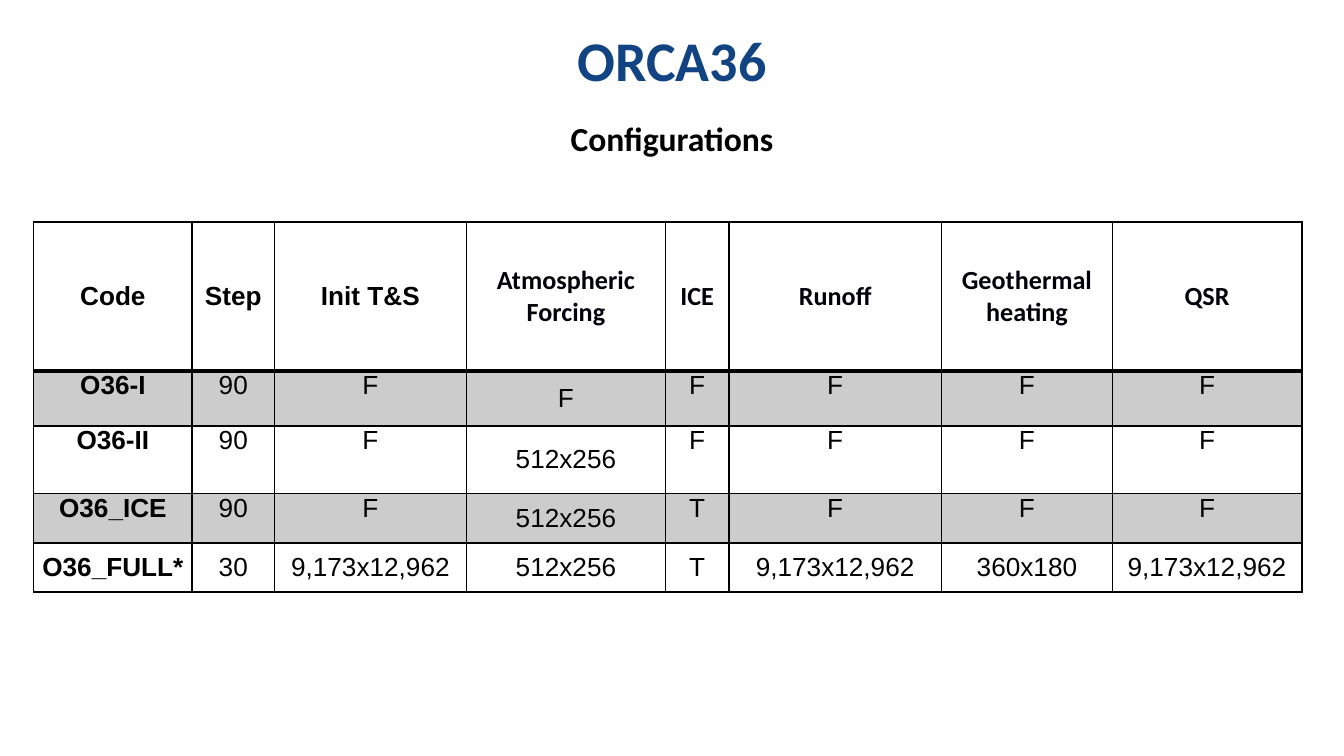
from lxml.etree import SubElement
from pptx import Presentation
from pptx.dml.color import RGBColor as RGB
from pptx.enum.text import MSO_ANCHOR as Anchor, PP_ALIGN as Align
from pptx.oxml import parse_xml
from pptx.oxml.ns import nsdecls, qn
from pptx.util import Pt

COLORS = {"title": "124484", "text": "000000", "heading": "00000A", "line": "000000", "band": "000000"}
BAND_OPACITY = 20
COLUMN_WIDTHS = [85, 44, 103, 106.5, 34, 114, 91.5, 101.5]
ROW_HEIGHTS = [80, 29.5, 36, 26.5, 26.5]
FORCING_COLUMN = 3
CONFIGURATIONS = [
    ["Code", "Step", "Init T&S", "Atmospheric Forcing", "ICE", "Runoff", "Geothermal heating", "QSR"],
    ["O36-I", "90", "F", "F", "F", "F", "F", "F"],
    ["O36-II", "90", "F", "512x256", "F", "F", "F", "F"],
    ["O36_ICE", "90", "F", "512x256", "T", "F", "F", "F"],
    ["O36_FULL*", "30", "9,173x12,962", "512x256", "T", "9,173x12,962", "360x180", "9,173x12,962"],
]


class ConfigurationSlide:
    """Holds the style and the current slide, and adds its elements."""

    def __init__(self, deck):
        self.slide = deck.slides.add_slide(deck.slide_layouts[6])

    def style(self, paragraph, size, font, color, bold):
        paragraph.alignment = Align.CENTER
        paragraph.font.size = Pt(size)
        paragraph.font.name = font
        paragraph.font.bold = bold
        paragraph.font.color.rgb = RGB.from_string(COLORS[color])

    def heading(self, text, top, height, size, color):
        frame = self.slide.shapes.add_textbox(Pt(0), Pt(top), Pt(720), Pt(height)).text_frame
        frame.word_wrap = True
        frame.vertical_anchor = Anchor.TOP
        frame.margin_left = frame.margin_right = Pt(5)
        frame.margin_top = frame.margin_bottom = Pt(2.9)
        frame.text = text
        frame.paragraphs[0].line_spacing = 0.9
        self.style(frame.paragraphs[0], size, "Calibri", color, True)

    def borders(self, cell, top, bottom):
        properties = cell._tc.get_or_add_tcPr()
        widths = {"lnL": 1, "lnR": 1, "lnT": top, "lnB": bottom}
        for index, (side, width) in enumerate(widths.items()):
            properties.insert(index, parse_xml(
                f'<a:{side} {nsdecls("a")} w="{Pt(width)}"><a:solidFill>'
                f'<a:srgbClr val="{COLORS["line"]}"/></a:solidFill></a:{side}>'))

    def band(self, cell):
        cell.fill.solid()
        cell.fill.fore_color.rgb = RGB.from_string(COLORS["band"])
        color = cell._tc.tcPr.find(f".//{qn('a:srgbClr')}")
        SubElement(color, qn("a:alpha"), val=str(BAND_OPACITY * 1000))

    def cell(self, cell, text, row, column):
        header, last = row == 0, row == len(ROW_HEIGHTS) - 1
        cell.text = text
        cell.margin_left = cell.margin_right = Pt(4.3)
        cell.margin_top = cell.margin_bottom = Pt(0)
        centered = header or last or column == FORCING_COLUMN
        cell.vertical_anchor = Anchor.MIDDLE if centered else Anchor.TOP
        font, color = ("Calibri", "heading") if header and column >= FORCING_COLUMN else ("Arial", "text")
        self.style(cell.text_frame.paragraphs[0], 14, font, color, header or column == 0)
        if row % 2:
            self.band(cell)
        else:
            cell.fill.background()
        self.borders(cell, 2 if row == 1 else 1, 2 if header else 1)

    def table(self, rows, left, top):
        table = self.slide.shapes.add_table(
            len(rows), len(COLUMN_WIDTHS), Pt(left), Pt(top),
            Pt(sum(COLUMN_WIDTHS)), Pt(sum(ROW_HEIGHTS))).table
        table.first_row = table.horz_banding = False
        for column, width in zip(table.columns, COLUMN_WIDTHS):
            column.width = Pt(width)
        for row, height in zip(table.rows, ROW_HEIGHTS):
            row.height = Pt(height)
        for row, values in enumerate(rows):
            for column, value in enumerate(values):
                self.cell(table.cell(row, column), value, row, column)


def main():
    deck = Presentation()
    deck.slide_width, deck.slide_height = Pt(720), Pt(405)
    page = ConfigurationSlide(deck)
    page.heading("ORCA36", 15, 47.5, 30, "title")
    page.heading("Configurations", 62.5, 30, 18, "text")
    page.table(CONFIGURATIONS, 18, 118.8)
    deck.save("out.pptx")


if __name__ == "__main__":
    main()
